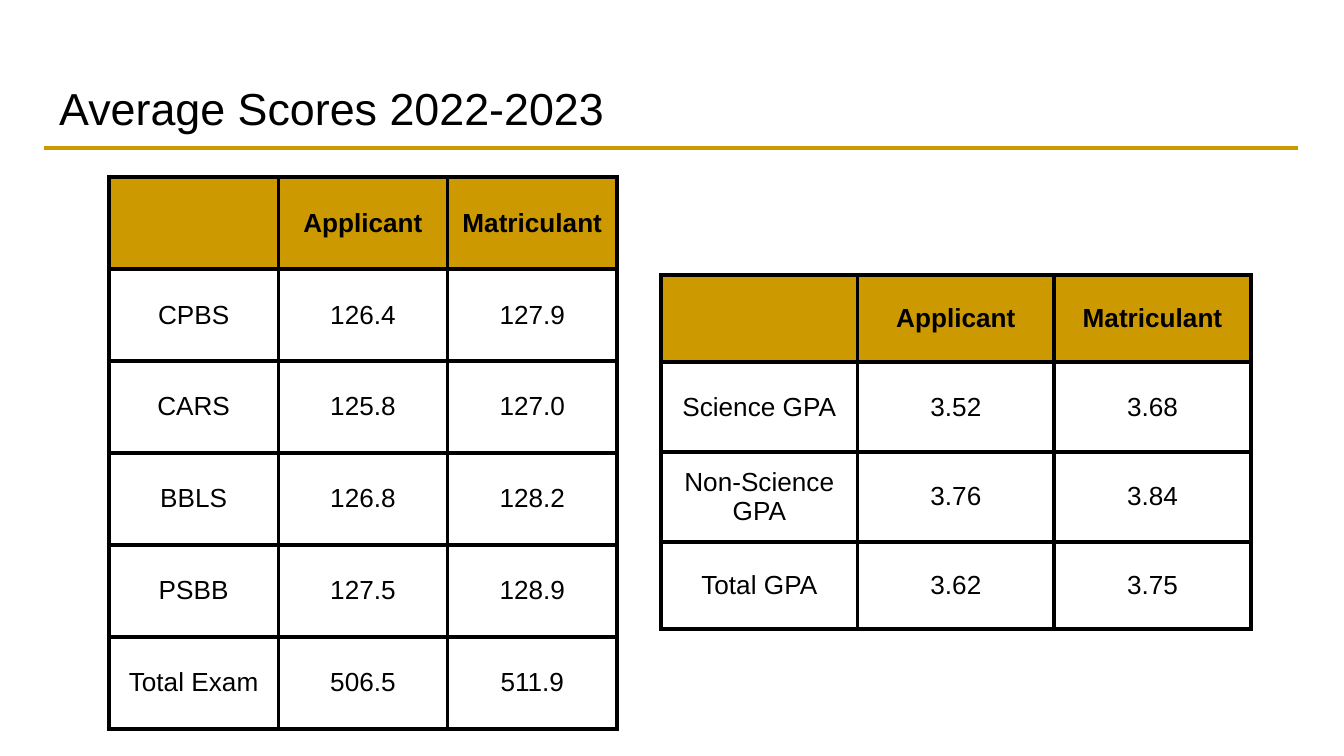
import pptx
import pptx.util
import pptx.dml.color
import pptx.enum.shapes
import pptx.enum.text
import pptx.oxml.ns
from lxml import etree

# Content
TITLE = "Average Scores 2022-2023"
HEADER = ("", "Applicant", "Matriculant")
SCORE_TABLES = [
    {
        "left": 109, "top": 177, "width": 508,
        "row_heights": [92] * 6,
        "rows": [
            HEADER,
            ("CPBS", "126.4", "127.9"),
            ("CARS", "125.8", "127.0"),
            ("BBLS", "126.8", "128.2"),
            ("PSBB", "127.5", "128.9"),
            ("Total Exam", "506.5", "511.9"),
        ],
    },
    {
        "left": 661, "top": 275, "width": 590,
        "row_heights": [87, 90, 90, 87],
        "rows": [
            HEADER,
            ("Science GPA", "3.52", "3.68"),
            ("Non-Science GPA", "3.76", "3.84"),
            ("Total GPA", "3.62", "3.75"),
        ],
    },
]

# Format
EMU_PER_PX = 914400 / 134.4
FONT = "Arial"
GOLD = pptx.dml.color.RGBColor(0xCC, 0x99, 0x00)
BLACK = pptx.dml.color.RGBColor(0x00, 0x00, 0x00)
LINE_WIDTH = pptx.util.Pt(2.25)
INSET = pptx.util.Inches(0.1)
ALIGN = pptx.enum.text.PP_ALIGN
MIDDLE = pptx.enum.text.MSO_ANCHOR.MIDDLE
qn = pptx.oxml.ns.qn


def px(length):
    return pptx.util.Emu(round(length * EMU_PER_PX))


def write(frame, text, size=14, bold=False, align=ALIGN.CENTER):
    paragraph = frame.paragraphs[0]
    paragraph.alignment = align
    paragraph.font.size = pptx.util.Pt(size)
    if not text:
        return
    run = paragraph.add_run()
    run.text = text
    run.font.name = FONT
    run.font.size = pptx.util.Pt(size)
    run.font.bold = bold
    run.font.color.rgb = BLACK


def set_margins(holder):
    holder.margin_left = holder.margin_right = INSET
    holder.margin_top = holder.margin_bottom = INSET
    holder.vertical_anchor = MIDDLE


def add_borders(cell):
    properties = cell._tc.get_or_add_tcPr()
    for side in ("lnL", "lnR", "lnT", "lnB"):
        border = etree.SubElement(properties, qn(f"a:{side}"), w=str(LINE_WIDTH))
        fill = etree.SubElement(border, qn("a:solidFill"))
        etree.SubElement(fill, qn("a:srgbClr"), val=str(BLACK))


def add_score_table(slide, left, top, width, row_heights, rows):
    table = slide.shapes.add_table(
        len(rows), len(HEADER), px(left), px(top), px(width), px(sum(row_heights))
    ).table
    table.horz_banding = False
    for column in table.columns:
        column.width = px(width / len(HEADER))
    for r, (height, labels) in enumerate(zip(row_heights, rows)):
        table.rows[r].height = px(height)
        for c, label in enumerate(labels):
            cell = table.cell(r, c)
            set_margins(cell)
            add_borders(cell)
            if r == 0:
                cell.fill.solid()
                cell.fill.fore_color.rgb = GOLD
            else:
                cell.fill.background()
            write(cell.text_frame, label, bold=r == 0)


def main():
    deck = pptx.Presentation()
    deck.slide_width, deck.slide_height = px(1344), px(756)
    slide = deck.slides.add_slide(deck.slide_layouts[6])

    # Rule under the title
    rule = slide.shapes.add_connector(
        pptx.enum.shapes.MSO_CONNECTOR.STRAIGHT, px(44), px(148), px(1298), px(148)
    )
    rule.line.color.rgb = GOLD
    rule.line.width = LINE_WIDTH
    etree.SubElement(rule._element.spPr, qn("a:effectLst"))

    # Title
    title = slide.shapes.add_textbox(px(46), px(66), px(1252), px(84)).text_frame
    title.word_wrap = True
    set_margins(title)
    write(title, TITLE, size=24, align=ALIGN.LEFT)

    # Score tables
    for score_table in SCORE_TABLES:
        add_score_table(slide, **score_table)

    deck.save("out.pptx")


if __name__ == "__main__":
    main()
